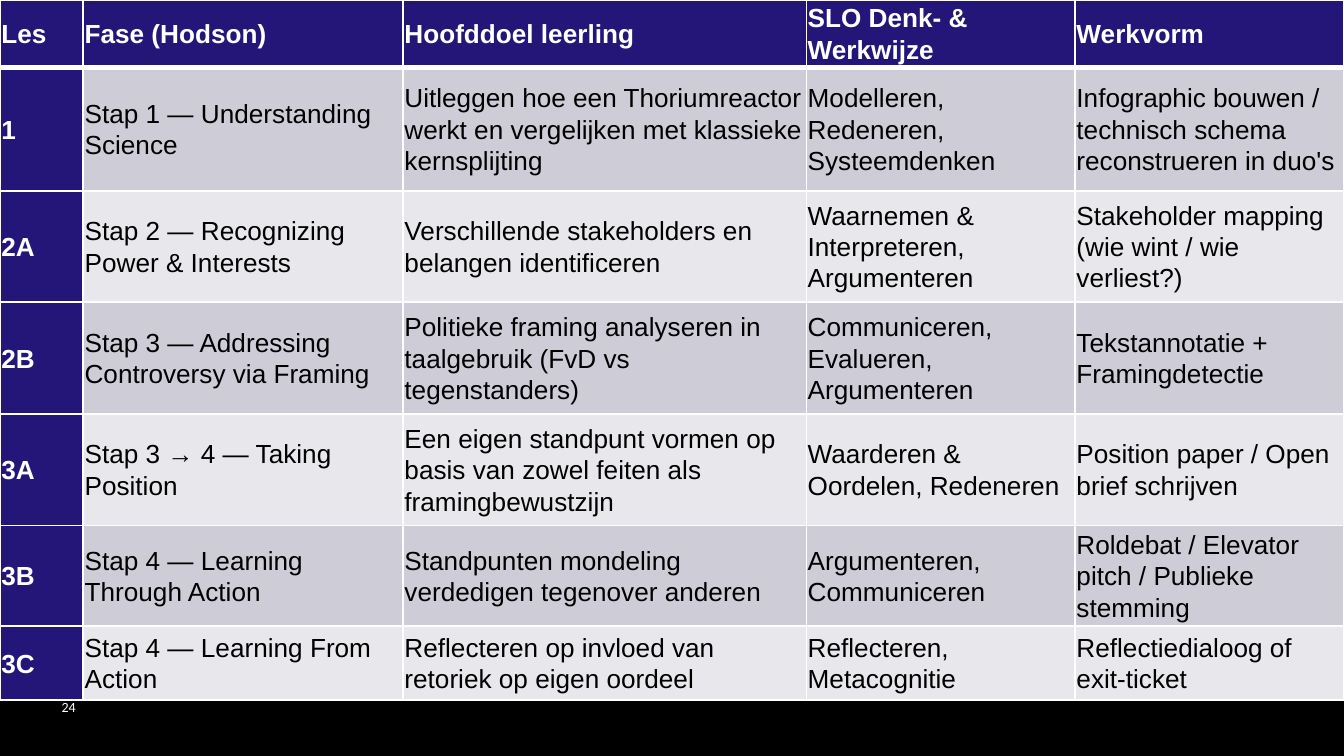
from lxml.etree import SubElement
from pptx import Presentation
from pptx.dml.color import RGBColor as RGB
from pptx.enum.text import MSO_ANCHOR as Anchor
from pptx.oxml.ns import qn
from pptx.util import Inches, Pt

COLORS = {"back": "000000", "head": "241679", "odd": "CDCCD7",
          "even": "E8E8EC", "light": "FFFFFF", "dark": "000000"}
COLS = [0.62, 2.38, 3, 2, 2]
ROWS = [0.46, 0.92, 0.83, 0.83, 0.83, 0.69, 0.55]
LESSONS = [
    ["Les", "Fase (Hodson)", "Hoofddoel leerling", "SLO Denk- & Werkwijze", "Werkvorm"],
    ["1", "Stap 1 — Understanding Science",
     "Uitleggen hoe een Thoriumreactor werkt en vergelijken met klassieke kernsplijting",
     "Modelleren, Redeneren, Systeemdenken",
     "Infographic bouwen / technisch schema reconstrueren in duo's"],
    ["2A", "Stap 2 — Recognizing Power & Interests",
     "Verschillende stakeholders en belangen identificeren",
     "Waarnemen & Interpreteren, Argumenteren",
     "Stakeholder mapping (wie wint / wie verliest?)"],
    ["2B", "Stap 3 — Addressing Controversy via Framing",
     "Politieke framing analyseren in taalgebruik (FvD vs tegenstanders)",
     "Communiceren, Evalueren, Argumenteren",
     "Tekstannotatie + Framingdetectie"],
    ["3A", "Stap 3 → 4 — Taking Position",
     "Een eigen standpunt vormen op basis van zowel feiten als framingbewustzijn",
     "Waarderen & Oordelen, Redeneren",
     "Position paper / Open brief schrijven"],
    ["3B", "Stap 4 — Learning Through Action",
     "Standpunten mondeling verdedigen tegenover anderen",
     "Argumenteren, Communiceren",
     "Roldebat / Elevator pitch / Publieke stemming"],
    ["3C", "Stap 4 — Learning From Action",
     "Reflecteren op invloed van retoriek op eigen oordeel",
     "Reflecteren, Metacognitie",
     "Reflectiedialoog of exit-ticket"],
]


def color(name):
    """Return the named colour."""
    return RGB.from_string(COLORS[name])


def style(run, font, size, tint, bold=False):
    """Format one run of text."""
    run.font.name, run.font.size, run.font.bold = font, Pt(size), bold
    run.font.color.rgb = color(tint)


def edge(cell, side, width):
    """Draw one white border of a cell."""
    line = SubElement(cell._tc.get_or_add_tcPr(), qn(f"a:ln{side}"), w=str(Pt(width)))
    fill = SubElement(line, qn("a:solidFill"))
    SubElement(fill, qn("a:srgbClr"), val=COLORS["light"])


def fill_cell(cell, text, row, col):
    """Write and format one cell by its place in the grid."""
    head = row == 0 or col == 0
    widths = {"L": 1, "R": 1, "T": 3 if row == 1 else 1, "B": 3 if row == 0 else 1}
    for side, width in widths.items():
        edge(cell, side, width)
    cell.fill.solid()
    cell.fill.fore_color.rgb = color("head" if head else "odd" if row % 2 else "even")
    cell.vertical_anchor = Anchor.MIDDLE
    cell.margin_left = cell.margin_right = Inches(0.01)
    cell.margin_top = cell.margin_bottom = 0
    para = cell.text_frame.paragraphs[0]
    para.text = text
    para.line_spacing, para.space_after = 1.07, Pt(8)
    style(para.runs[0], "Arial", 14, "light" if head else "dark", head)


def add_plan(slide, left, top, width, height):
    """Place the lesson plan table in its box."""
    box = map(Inches, (left, top, width, height))
    table = slide.shapes.add_table(len(ROWS), len(COLS), *box).table
    table.first_col = True
    for col, size in zip(table.columns, COLS):
        col.width = Inches(size * width / sum(COLS))
    for row, size in zip(table.rows, ROWS):
        row.height = Inches(size * height / sum(ROWS))
    for r, texts in enumerate(LESSONS):
        for c, text in enumerate(texts):
            fill_cell(table.cell(r, c), text, r, c)


def add_number(slide, left, top, width, height):
    """Place the page number in its box."""
    frame = slide.shapes.add_textbox(*map(Inches, (left, top, width, height))).text_frame
    frame.word_wrap = True
    frame.vertical_anchor = Anchor.MIDDLE
    frame.text = "24"
    style(frame.paragraphs[0].runs[0], "Calibri", 7.5, "light")


def main():
    """Build and save the slide."""
    deck = Presentation()
    deck.slide_width = Inches(10)
    deck.slide_height = deck.slide_width * 9 // 16
    slide = deck.slides.add_slide(deck.slide_layouts[6])
    slide.background.fill.solid()
    slide.background.fill.fore_color.rgb = color("back")
    add_number(slide, 0.36, 5.11, 0.39, 0.3)
    add_plan(slide, 0, 0, 10, 5.11)
    deck.save("out.pptx")


if __name__ == "__main__":
    main()
